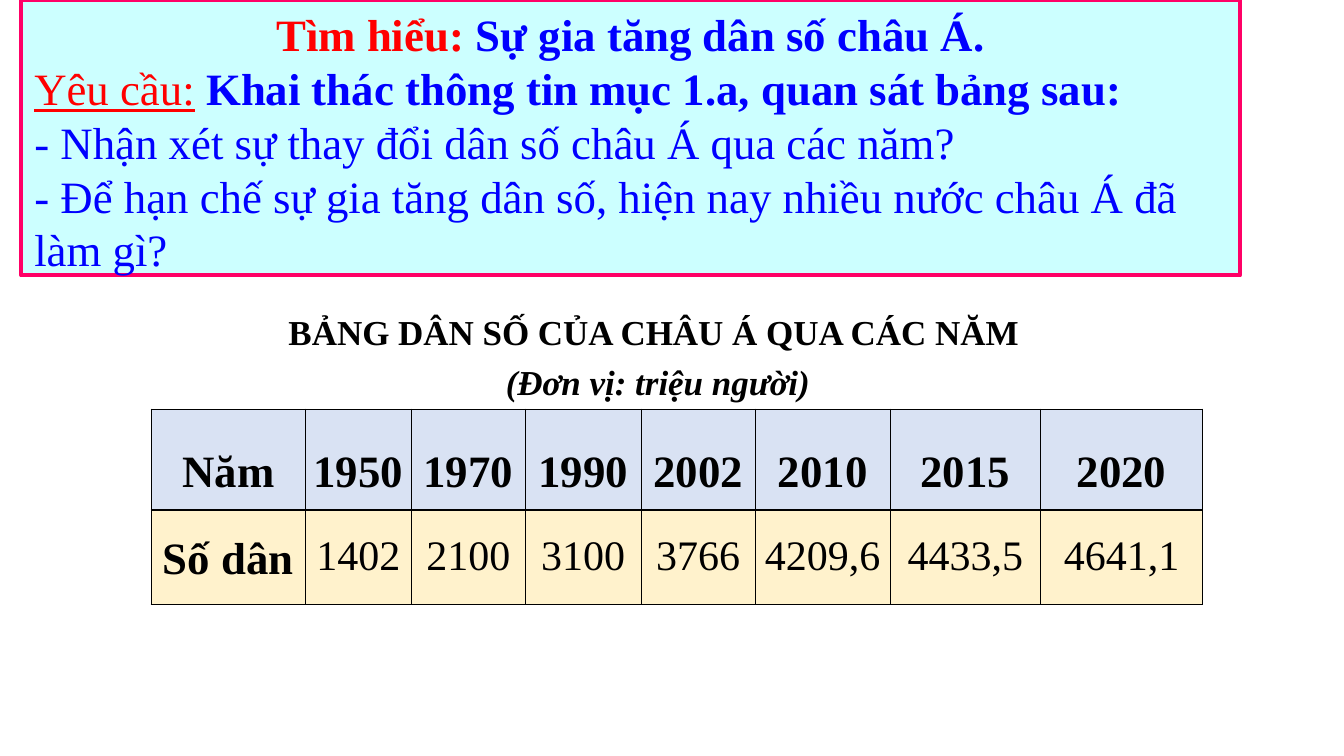
from dataclasses import dataclass

from lxml import etree
from pptx import Presentation
from pptx.dml.color import RGBColor
from pptx.enum import text as text_enum
from pptx.oxml import ns
from pptx.util import Inches, Pt

ALIGN = text_enum.PP_ALIGN
ANCHOR = text_enum.MSO_ANCHOR


@dataclass(frozen=True)
class Theme:
    font: str = "Times New Roman"
    red: str = "FF0000"
    blue: str = "0000FF"
    black: str = "000000"
    box_fill: str = "CCFFFF"
    box_line: str = "FF0066"
    year_fill: str = "D9E2F3"
    population_fill: str = "FFF2CC"
    large: int = 32
    figure: int = 30
    caption: int = 25


THEME = Theme()


@dataclass(frozen=True)
class Span:
    text: str
    color: str = THEME.blue
    size: int = THEME.large
    bold: bool = False
    italic: bool = False
    underline: bool = False


@dataclass(frozen=True)
class Line:
    spans: list[Span]
    align: ALIGN = ALIGN.LEFT


@dataclass(frozen=True)
class TableRow:
    cells: list[str]
    height: float
    fill: str
    anchor: ANCHOR
    value_size: int
    value_bold: bool


TASK = [
    Line([Span("Tìm hiểu: ", THEME.red, bold=True),
          Span("Sự gia tăng dân số châu Á.", bold=True)], ALIGN.CENTER),
    Line([Span("Yêu cầu:", THEME.red, underline=True), Span(" ", THEME.red),
          Span("Khai thác thông tin mục 1.a, quan sát bảng sau: ", bold=True)],
         ALIGN.JUSTIFY),
    Line([Span("- Nhận xét sự thay đổi dân số châu Á qua các năm?")]),
    Line([Span("- Để hạn chế sự gia tăng dân số, hiện nay nhiều nước châu Á đã làm gì?")]),
]
CAPTION = [
    Line([Span("BẢNG DÂN SỐ CỦA CHÂU Á QUA CÁC NĂM ", THEME.black, THEME.caption,
               bold=True)], ALIGN.CENTER),
    Line([Span("(Đơn vị: triệu người)", THEME.black, THEME.caption,
               bold=True, italic=True)], ALIGN.CENTER),
]
COLUMN_WIDTHS = [1.53, 1.05, 1.13, 1.15, 1.13, 1.34, 1.49, 1.61]
ROWS = [
    TableRow(["Năm", "1950", "1970", "1990", "2002", "2010", "2015", "2020"],
             1.0, THEME.year_fill, ANCHOR.MIDDLE, THEME.large, True),
    TableRow(["Số dân", "1402", "2100", "3100", "3766", "4209,6", "4433,5", "4641,1"],
             0.94, THEME.population_fill, ANCHOR.TOP, THEME.figure, False),
]


def rgb(value: str) -> RGBColor:
    return RGBColor.from_string(value)


def write_text(frame, lines: list[Line], *, spacing: float = 1.0, before: float = 0) -> None:
    for index, line in enumerate(lines):
        paragraph = frame.paragraphs[0] if index == 0 else frame.add_paragraph()
        paragraph.alignment = line.align
        paragraph.line_spacing = spacing
        paragraph.space_before = Pt(before)
        for span in line.spans:
            run = paragraph.add_run()
            run.text = span.text
            font = run.font
            font.name, font.size = THEME.font, Pt(span.size)
            font.bold, font.italic, font.underline = span.bold, span.italic, span.underline
            font.color.rgb = rgb(span.color)


def place(shape, left: float, top: float, width: float, height: float) -> None:
    shape.left, shape.top = Inches(left), Inches(top)
    shape.width, shape.height = Inches(width), Inches(height)


def set_margins(target, side: float, end: float) -> None:
    target.margin_left = target.margin_right = Inches(side)
    target.margin_top = target.margin_bottom = Inches(end)


def remove_bullets(frame) -> None:
    for paragraph in frame.paragraphs:
        properties = paragraph._p.get_or_add_pPr()
        properties.set("marL", "0")
        properties.set("indent", "0")
        etree.SubElement(properties, ns.qn("a:buNone"))


def add_borders(cell) -> None:
    properties = cell._tc.get_or_add_tcPr()
    for index, side in enumerate(("lnL", "lnR", "lnT", "lnB")):
        border = etree.Element(ns.qn(f"a:{side}"), w=str(Pt(1)))
        fill = etree.SubElement(border, ns.qn("a:solidFill"))
        etree.SubElement(fill, ns.qn("a:srgbClr"), val=THEME.black)
        properties.insert(index, border)


def format_task(box) -> None:
    place(box, 0.21, 0, 12.09, 2.83)
    box.fill.solid()
    box.fill.fore_color.rgb = rgb(THEME.box_fill)
    box.line.color.rgb = rgb(THEME.box_line)
    box.line.width = Pt(3)
    frame = box.text_frame
    frame.word_wrap = True
    frame.auto_size = text_enum.MSO_AUTO_SIZE.SHAPE_TO_FIT_TEXT
    frame.vertical_anchor = ANCHOR.TOP
    set_margins(frame, 0.13, 0.07)
    write_text(frame, TASK)
    remove_bullets(frame)


def format_caption(title) -> None:
    place(title, 1.29, 2.94, 10.47, 1.11)
    frame = title.text_frame
    frame.word_wrap = True
    frame.auto_size = text_enum.MSO_AUTO_SIZE.SHAPE_TO_FIT_TEXT
    frame.vertical_anchor = ANCHOR.MIDDLE
    set_margins(frame, 0.1, 0.05)
    write_text(frame, CAPTION, spacing=1.2)


def add_population_table(slide) -> None:
    table = slide.shapes.add_table(
        len(ROWS), len(COLUMN_WIDTHS), Inches(1.5), Inches(4.06),
        Inches(sum(COLUMN_WIDTHS)), Inches(sum(row.height for row in ROWS))).table
    table.first_row = table.horz_banding = False
    for column, width in zip(table.columns, COLUMN_WIDTHS):
        column.width = Inches(width)
    for row_index, row in enumerate(ROWS):
        table.rows[row_index].height = Inches(row.height)
        for column_index, content in enumerate(row.cells):
            cell = table.cell(row_index, column_index)
            is_label = column_index == 0
            span = Span(content, THEME.black,
                        THEME.large if is_label else row.value_size,
                        bold=is_label or row.value_bold)
            cell.vertical_anchor = row.anchor
            set_margins(cell, 0.07, 0)
            cell.fill.solid()
            cell.fill.fore_color.rgb = rgb(row.fill)
            add_borders(cell)
            write_text(cell.text_frame, [Line([span], ALIGN.CENTER)], spacing=1.5, before=6)


def main() -> None:
    presentation = Presentation()
    presentation.slide_width, presentation.slide_height = Inches(13.33), Inches(7.5)
    slide = presentation.slides.add_slide(presentation.slide_layouts[1])
    format_task(slide.placeholders[1])
    format_caption(slide.shapes.title)
    add_population_table(slide)
    presentation.save("out.pptx")


if __name__ == "__main__":
    main()
